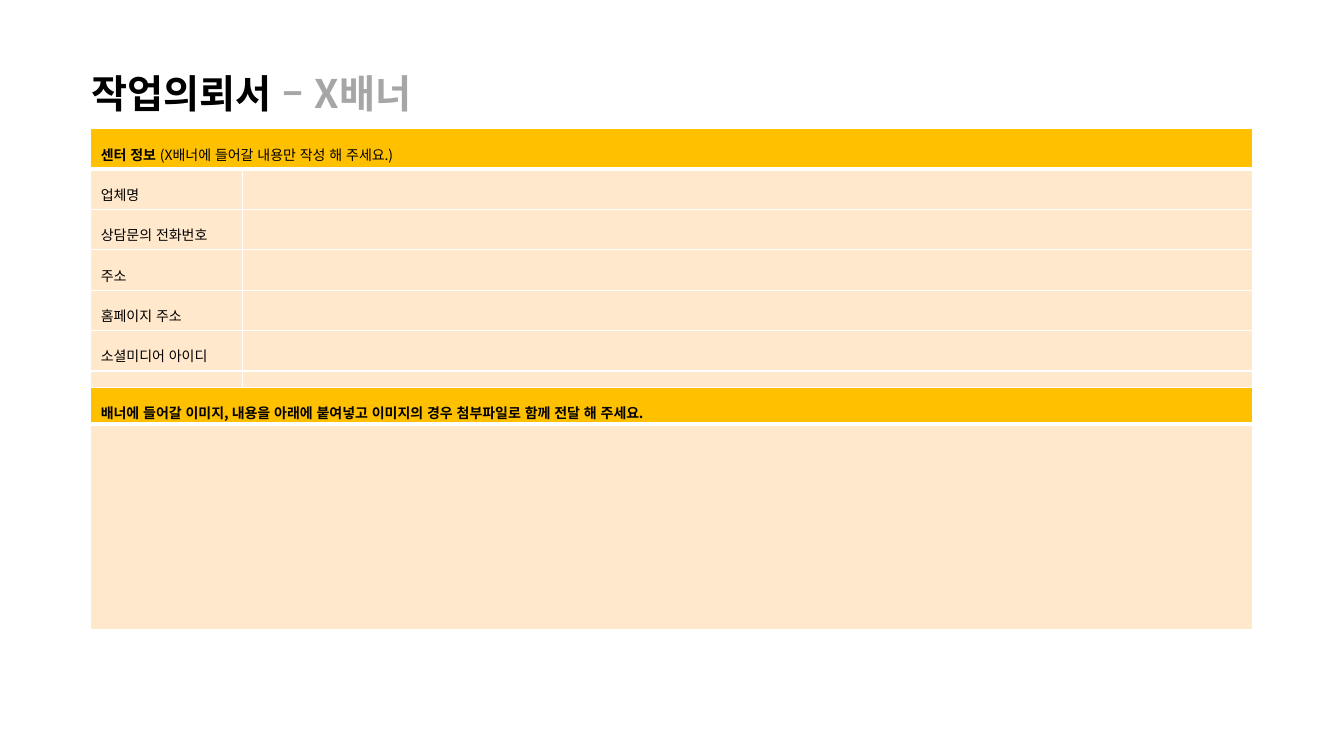
from lxml import etree
from pptx import Presentation
from pptx.dml.color import RGBColor
from pptx.enum.text import MSO_AUTO_SIZE
from pptx.oxml.ns import qn
from pptx.util import Pt

FIT_SHAPE = MSO_AUTO_SIZE.SHAPE_TO_FIT_TEXT

# Content: each run is (text, bold)
TITLE = ["작업의뢰서 ", "– X배너"]
CENTER_HEADER = [("센터 정보 ", True), ("(X배너에 들어갈 내용만 작성 해 주세요.)", False)]
CENTER_FIELDS = ["업체명", "상담문의 전화번호", "주소", "홈페이지 주소", "소셜미디어 아이디"]
BANNER_HEADER = [("배너에 들어갈 이미지, 내용을 아래에 붙여넣고 이미지의 경우 "
                  "첨부파일로 함께 전달 해 주세요.", True)]

THEME = {
    "font": "Noto Sans CJK KR", "language": "ko-KR",
    "title_size": 28, "body_size": 10, "empty_size": 4,
    "text": "000000", "muted": "A6A6A6",
    "header": "FFC000", "field": "FFE8CB", "border": "FFFFFF",
    "thin": 1, "thick": 3,
}

# Layout in points; the spacer row fills the gap between the two tables
SLIDE_WIDTH, SLIDE_HEIGHT = 960, 540
TABLE_LEFT, TABLE_WIDTH, LABEL_WIDTH = 64.8, 830, 108.4
CENTER_TOP, ROW_HEIGHT = 92, 28.8
BANNER_TOP, BANNER_HEADER_HEIGHT, BANNER_BODY_HEIGHT = 276.8, 26, 147
SPACER_HEIGHT = BANNER_TOP - CENTER_TOP - ROW_HEIGHT * (len(CENTER_FIELDS) + 1)
TITLE_BOX = (58.3, 46, 265.7, 41.2)


def style_run(run, size, color, bold):
    run.font.size = Pt(size)
    run.font.bold = bold
    run.font.color.rgb = RGBColor.from_string(color)
    run.font.name = THEME["font"]
    properties = run.font._element
    properties.set("lang", THEME["language"])
    etree.SubElement(properties, qn("a:ea"), typeface=THEME["font"])


def set_borders(cell, top, bottom):
    widths = {"lnL": THEME["thin"], "lnR": THEME["thin"], "lnT": top, "lnB": bottom}
    properties = cell._tc.get_or_add_tcPr()
    for index, (side, width) in enumerate(widths.items()):
        line = etree.Element(qn("a:" + side), w=str(Pt(width)))
        fill = etree.SubElement(line, qn("a:solidFill"))
        etree.SubElement(fill, qn("a:srgbClr"), val=THEME["border"])
        properties.insert(index, line)


def fill_cell(cell, runs, color, top="thin", bottom="thin"):
    cell.fill.solid()
    cell.fill.fore_color.rgb = RGBColor.from_string(color)
    set_borders(cell, THEME[top], THEME[bottom])
    paragraph = cell.text_frame.paragraphs[0]
    paragraph.line_spacing = 1.5
    for text, bold in runs:
        run = paragraph.add_run()
        run.text = text
        style_run(run, THEME["body_size"], THEME["text"], bold)
    if not runs:  # lets empty rows stay low
        cell.margin_top = cell.margin_bottom = Pt(0)
        etree.SubElement(paragraph._p, qn("a:endParaRPr"), sz=str(THEME["empty_size"] * 100))


def add_form_table(slide, top, column_widths, row_heights):
    frame = slide.shapes.add_table(
        len(row_heights), len(column_widths), Pt(TABLE_LEFT), Pt(top),
        Pt(sum(column_widths)), Pt(sum(row_heights)))
    for column, width in zip(frame.table.columns, column_widths):
        column.width = Pt(width)
    for row, height in zip(frame.table.rows, row_heights):
        row.height = Pt(height)
    return frame.table


def main():
    presentation = Presentation()
    presentation.slide_width, presentation.slide_height = Pt(SLIDE_WIDTH), Pt(SLIDE_HEIGHT)
    slide = presentation.slides.add_slide(presentation.slide_layouts[6])

    # Center information table
    center = add_form_table(
        slide, CENTER_TOP, [LABEL_WIDTH, TABLE_WIDTH - LABEL_WIDTH],
        [ROW_HEIGHT] * (len(CENTER_FIELDS) + 1) + [SPACER_HEIGHT])
    center.cell(0, 0).merge(center.cell(0, 1))
    fill_cell(center.cell(0, 0), CENTER_HEADER, THEME["header"], bottom="thick")
    fill_cell(center.cell(0, 1), [], THEME["header"], bottom="thick")
    label_runs = [[(label, False)] for label in CENTER_FIELDS] + [[]]
    for row, runs in enumerate(label_runs, start=1):
        top = "thick" if row == 1 else "thin"
        fill_cell(center.cell(row, 0), runs, THEME["field"], top=top)
        fill_cell(center.cell(row, 1), [], THEME["field"], top=top)

    # Title
    title = slide.shapes.add_textbox(*map(Pt, TITLE_BOX))
    title.text_frame.word_wrap = False
    title.text_frame.auto_size = FIT_SHAPE
    paragraph = title.text_frame.paragraphs[0]
    for text, color in zip(TITLE, (THEME["text"], THEME["muted"])):
        run = paragraph.add_run()
        run.text = text
        style_run(run, THEME["title_size"], color, True)

    # Banner content table
    banner = add_form_table(
        slide, BANNER_TOP, [TABLE_WIDTH], [BANNER_HEADER_HEIGHT, BANNER_BODY_HEIGHT])
    banner.cell(0, 0).margin_bottom = Pt(0)
    fill_cell(banner.cell(0, 0), BANNER_HEADER, THEME["header"], bottom="thick")
    fill_cell(banner.cell(1, 0), [], THEME["field"], top="thick")

    presentation.save("out.pptx")


if __name__ == "__main__":
    main()
